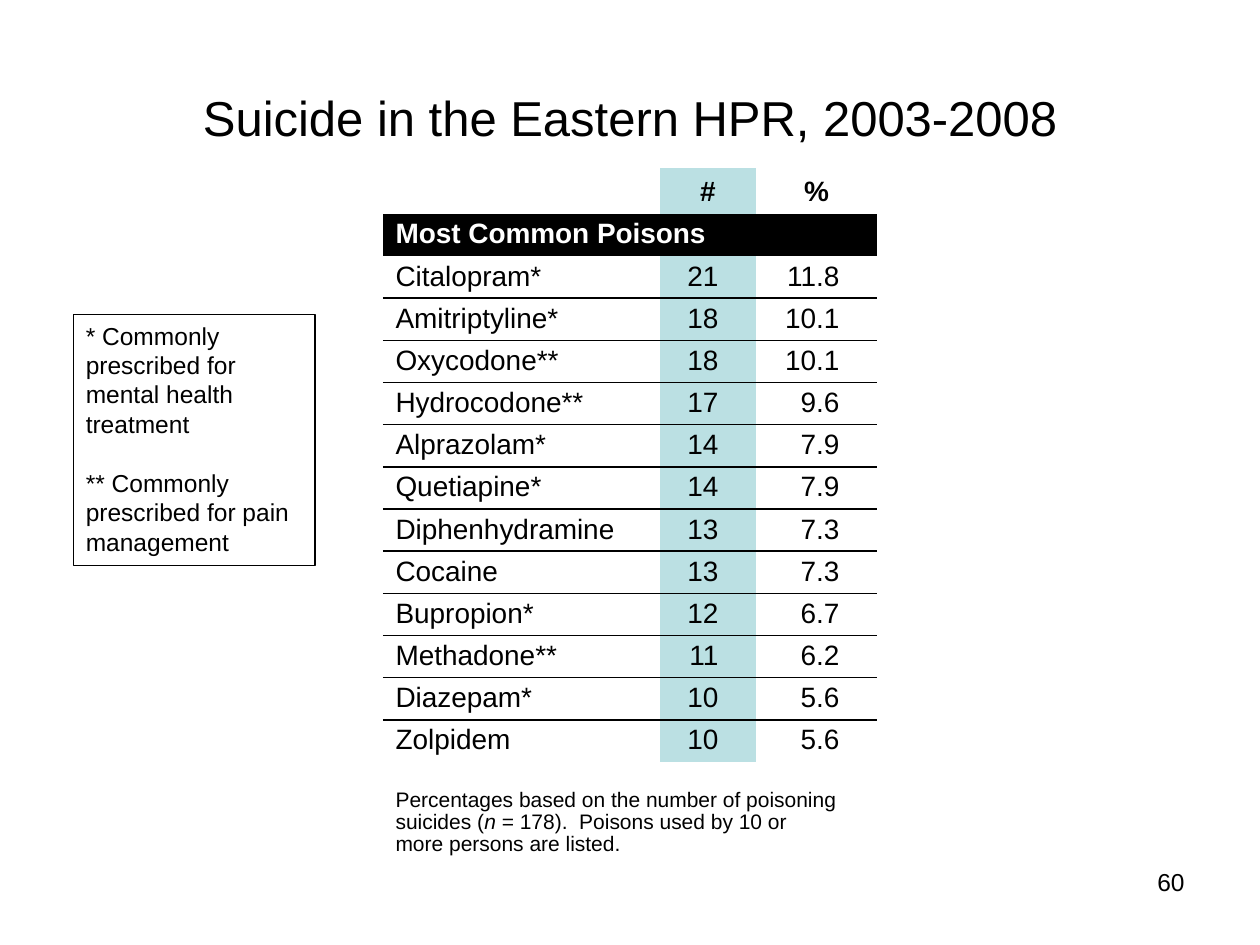
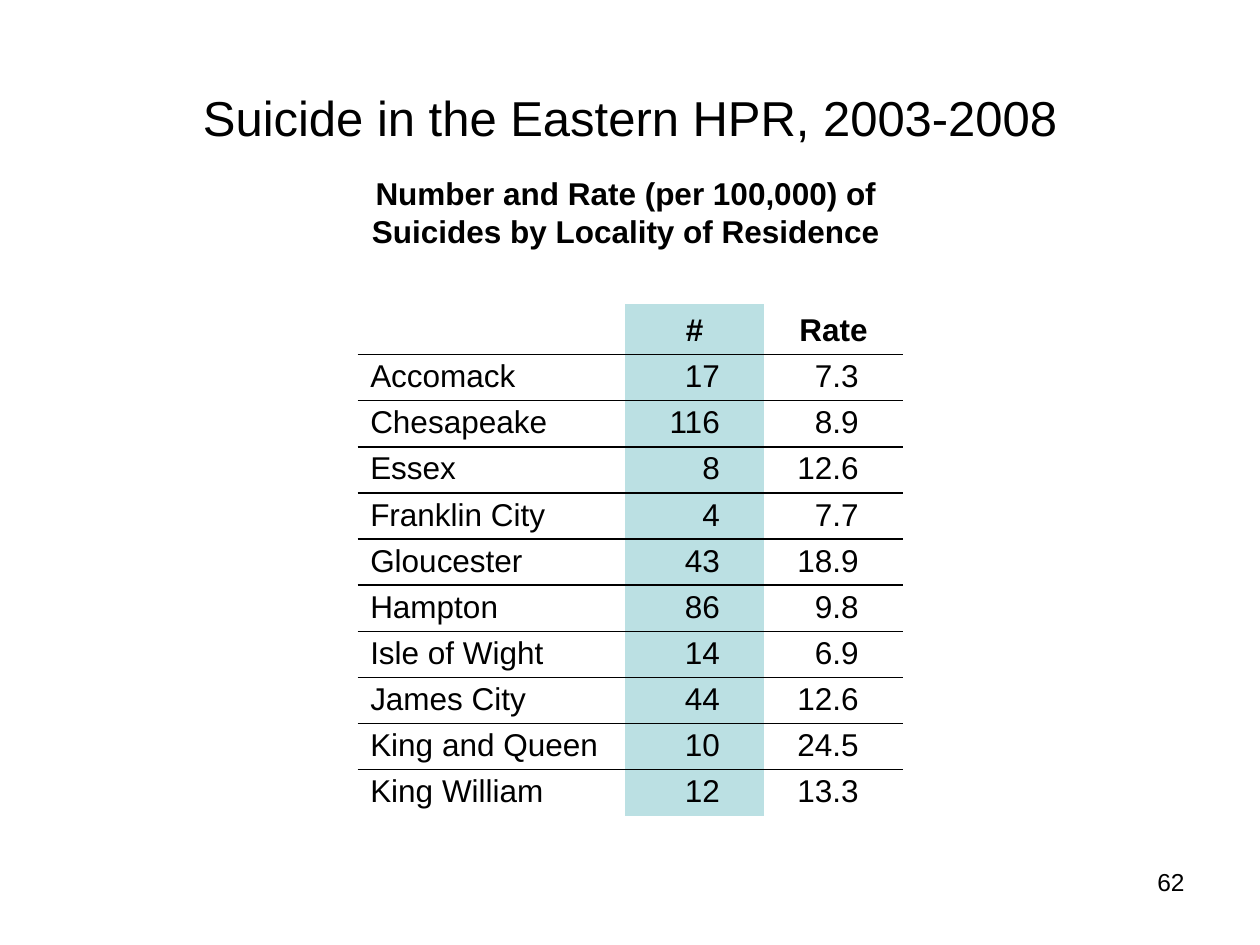
from dataclasses import dataclass

from lxml.etree import SubElement
from pptx import Presentation
from pptx.dml.color import RGBColor
from pptx.enum.shapes import MSO_SHAPE as Shape
from pptx.enum.text import MSO_ANCHOR as Anchor, MSO_AUTO_SIZE as AutoSize, PP_ALIGN as Align
from pptx.oxml.ns import qn
from pptx.util import Cm, Pt


@dataclass(frozen=True)
class Theme:
    font: str = "Arial"
    ink: RGBColor = RGBColor(0x00, 0x00, 0x00)
    paper: RGBColor = RGBColor(0xFF, 0xFF, 0xFF)
    count_band: RGBColor = RGBColor(0xBB, 0xE0, 0xE3)
    title: float = 28
    subtitle: float = 18
    note: float = 14
    footnote: float = 12
    spacer: float = 2
    line_spacing: float = 0.95
    rule: float = 1
    box_line: float = 0.75


THEME = Theme()
TITLE = "Suicide in the Eastern HPR, 2003-2008"
NO_STYLE = "{2D5ABB26-0587-4C30-8999-92F81FD0307C}"  # table without style or grid


@dataclass(frozen=True)
class Box:
    """A place on the slide, in centimetres."""
    left: float
    top: float
    width: float
    height: float = 0

    def lengths(self) -> tuple:
        return Cm(self.left), Cm(self.top), Cm(self.width), Cm(self.height)


@dataclass(frozen=True)
class Run:
    text: str
    bold: bool = False
    italic: bool = False


@dataclass(frozen=True)
class CountTable:
    """A label column, a shaded count column and a share or rate column."""
    left: float
    top: float
    columns: tuple
    header_height: float
    row_height: float
    size: float
    label_margin: float
    number_margin: float
    measure: str
    rows: tuple
    category: str = ""
    footnote: tuple = ()
    spacer_height: float = 0.38
    footnote_height: float = 1.62


POISONS = CountTable(
    left=7.72, top=3.38, columns=(5.58, 1.94, 2.44),
    header_height=0.89, row_height=0.85, size=16,
    label_margin=0.76, number_margin=0.76, measure="%",
    category="Most Common Poisons",
    rows=(
        ("Citalopram*", "21", "11.8"),
        ("Amitriptyline*", "18", "10.1"),
        ("Oxycodone**", "18", "10.1"),
        ("Hydrocodone**", "17", "9.6"),
        ("Alprazolam*", "14", "7.9"),
        ("Quetiapine*", "14", "7.9"),
        ("Diphenhydramine", "13", "7.3"),
        ("Cocaine", "13", "7.3"),
        ("Bupropion*", "12", "6.7"),
        ("Methadone**", "11", "6.2"),
        ("Diazepam*", "10", "5.6"),
        ("Zolpidem", "10", "5.6"),
    ),
    footnote=(
        Run("Percentages based on the number of poisoning suicides ("),
        Run("n ", italic=True),
        Run("= 178).  Poisons used by 10 or more persons are listed."),
    ),
)

LOCALITIES = CountTable(
    left=7.21, top=6.13, columns=(5.39, 2.8, 2.8),
    header_height=0.97, row_height=0.93, size=18,
    label_margin=0.25, number_margin=0.89, measure="Rate",
    rows=(
        ("Accomack", "17", "7.3"),
        ("Chesapeake", "116", "8.9"),
        ("Essex", "8", "12.6"),
        ("Franklin City", "4", "7.7"),
        ("Gloucester", "43", "18.9"),
        ("Hampton", "86", "9.8"),
        ("Isle of Wight", "14", "6.9"),
        ("James City", "44", "12.6"),
        ("King and Queen", "10", "24.5"),
        ("King William", "12", "13.3"),
    ),
)


# Text
def add_runs(paragraph, runs: tuple, size: float, align=Align.LEFT, color=THEME.ink) -> None:
    paragraph.alignment = align
    for part in runs:
        run = paragraph.add_run()
        run.text = part.text
        font = run.font
        font.name, font.size = THEME.font, Pt(size)
        font.bold, font.italic = part.bold, part.italic
        font.color.rgb = color


def fill_frame(frame, paragraphs: tuple, size: float, align=Align.LEFT, gap: float = 0) -> None:
    """Write one paragraph per tuple of runs, with a gap in points between them."""
    frame.word_wrap = True
    for index, runs in enumerate(paragraphs):
        paragraph = frame.add_paragraph() if index else frame.paragraphs[0]
        paragraph.space_before = Pt(gap if index else 0)
        add_runs(paragraph, runs, size, align)


def add_text(slide, box: Box, paragraphs: tuple, size: float, align) -> None:
    fill_frame(slide.shapes.add_textbox(*box.lengths()).text_frame, paragraphs, size, align)


# Table cells
def set_rules(cell, top: bool, bottom: bool) -> None:
    properties = cell._tc.get_or_add_tcPr()
    for tag, shown in (("a:lnL", False), ("a:lnR", False), ("a:lnT", top), ("a:lnB", bottom)):
        line = SubElement(properties, qn(tag), w=str(Pt(THEME.rule)))
        if shown:
            fill = SubElement(line, qn("a:solidFill"))
            SubElement(fill, qn("a:srgbClr"), val=str(THEME.ink))
        else:
            SubElement(line, qn("a:noFill"))


def style_cell(cell, top: bool = False, bottom: bool = False, fill=None) -> None:
    set_rules(cell, top, bottom)
    if fill is None:
        cell.fill.background()
    else:
        cell.fill.solid()
        cell.fill.fore_color.rgb = fill


def write_cell(cell, runs: tuple, size: float, align=Align.LEFT, margin: float = 0.25,
               color=THEME.ink) -> None:
    cell.vertical_anchor = Anchor.BOTTOM
    cell.margin_right = Cm(margin)
    cell.margin_top = Cm(0.07)
    paragraph = cell.text_frame.paragraphs[0]
    paragraph.line_spacing = THEME.line_spacing
    add_runs(paragraph, runs, size, align, color)


def set_empty_size(cell, size: float) -> None:
    """Keep an empty cell from growing its row."""
    paragraph = cell.text_frame.paragraphs[0]._p
    end = SubElement(paragraph, qn("a:endParaRPr"), sz=str(int(size * 100)))
    SubElement(end, qn("a:latin"), typeface=THEME.font)


def add_count_table(slide, spec: CountTable) -> None:
    heights = [spec.header_height]
    heights += [spec.row_height] * (bool(spec.category) + len(spec.rows))
    if spec.footnote:
        heights += [spec.spacer_height, spec.footnote_height]
    place = Box(spec.left, spec.top, sum(spec.columns), sum(heights))
    frame = slide.shapes.add_table(len(heights), len(spec.columns), *place.lengths())
    table = frame.table
    table.first_row = table.horz_banding = False
    table._tbl.tblPr.find(qn("a:tableStyleId")).text = NO_STYLE
    for column, width in zip(table.columns, spec.columns):
        column.width = Cm(width)
    for row, height in zip(table.rows, heights):
        row.height = Cm(height)

    # Header
    rule_header = not spec.category
    for col, heading in enumerate(("", "#", spec.measure)):
        cell = table.cell(0, col)
        style_cell(cell, bottom=rule_header, fill=THEME.count_band if col == 1 else None)
        if heading:
            write_cell(cell, (Run(heading, bold=True),), spec.size, Align.CENTER)
        else:
            set_empty_size(cell, spec.size)

    # Category band
    if spec.category:
        for col in range(3):
            style_cell(table.cell(1, col), fill=THEME.ink)
        band = table.cell(1, 0)
        band.merge(table.cell(1, 2))
        write_cell(band, (Run(spec.category, bold=True),), spec.size,
                   margin=spec.label_margin, color=THEME.paper)

    # Data rows, ruled between neighbours
    first = 2 if spec.category else 1
    for index, values in enumerate(spec.rows):
        for col, value in enumerate(values):
            cell = table.cell(first + index, col)
            style_cell(cell, top=index > 0 or rule_header, bottom=index < len(spec.rows) - 1,
                       fill=THEME.count_band if col == 1 else None)
            write_cell(cell, (Run(value),), spec.size, Align.RIGHT if col else Align.LEFT,
                       spec.number_margin if col else spec.label_margin)

    # Spacer and footnote
    if spec.footnote:
        spacer, last = len(heights) - 2, len(heights) - 1
        for col in range(3):
            gap = table.cell(spacer, col)
            style_cell(gap)
            set_empty_size(gap, THEME.spacer)
            gap.margin_top = gap.margin_bottom = 0
            style_cell(table.cell(last, col))
        footnote = table.cell(last, 0)
        footnote.merge(table.cell(last, 2))
        write_cell(footnote, spec.footnote, THEME.footnote, margin=spec.label_margin)


# Slides
def add_titled_slide(deck, number: str):
    slide = deck.slides.add_slide(deck.slide_layouts[5])
    title = slide.shapes.title
    title.left, title.top, title.width, title.height = Box(1.27, 0.76, 22.86, 3.18).lengths()
    title.text_frame.auto_size = AutoSize.NONE
    title.text_frame.vertical_anchor = Anchor.MIDDLE
    fill_frame(title.text_frame, ((Run(TITLE),),), THEME.title, Align.CENTER)
    add_text(slide, Box(18.21, 17.35, 5.92, 1.32), ((Run(number),),), THEME.note, Align.RIGHT)
    return slide


def add_prescription_key(slide) -> None:
    key = slide.shapes.add_shape(Shape.RECTANGLE, *Box(1.48, 6.34, 4.87, 5.06).lengths())
    key.shadow.inherit = False
    key.fill.background()
    key.line.color.rgb = THEME.ink
    key.line.width = Pt(THEME.box_line)
    key.text_frame.vertical_anchor = Anchor.TOP
    fill_frame(key.text_frame, (
        (Run("* Commonly prescribed for mental health treatment"),),
        (Run("** Commonly prescribed for pain management"),),
    ), THEME.note, gap=16.8)


def main() -> None:
    deck = Presentation()
    deck.slide_width, deck.slide_height = Cm(25.4), Cm(19.05)

    poisons = add_titled_slide(deck, "60")
    add_count_table(poisons, POISONS)
    add_prescription_key(poisons)

    localities = add_titled_slide(deck, "62")
    add_count_table(localities, LOCALITIES)
    add_text(localities, Box(4.45, 3.38, 16.51, 1.91), (
        (Run("Number and Rate (per 100,000) of ", bold=True),),
        (Run("Suicides by Locality of Residence ", bold=True),),
    ), THEME.subtitle, Align.CENTER)

    deck.save("out.pptx")


if __name__ == "__main__":
    main()
